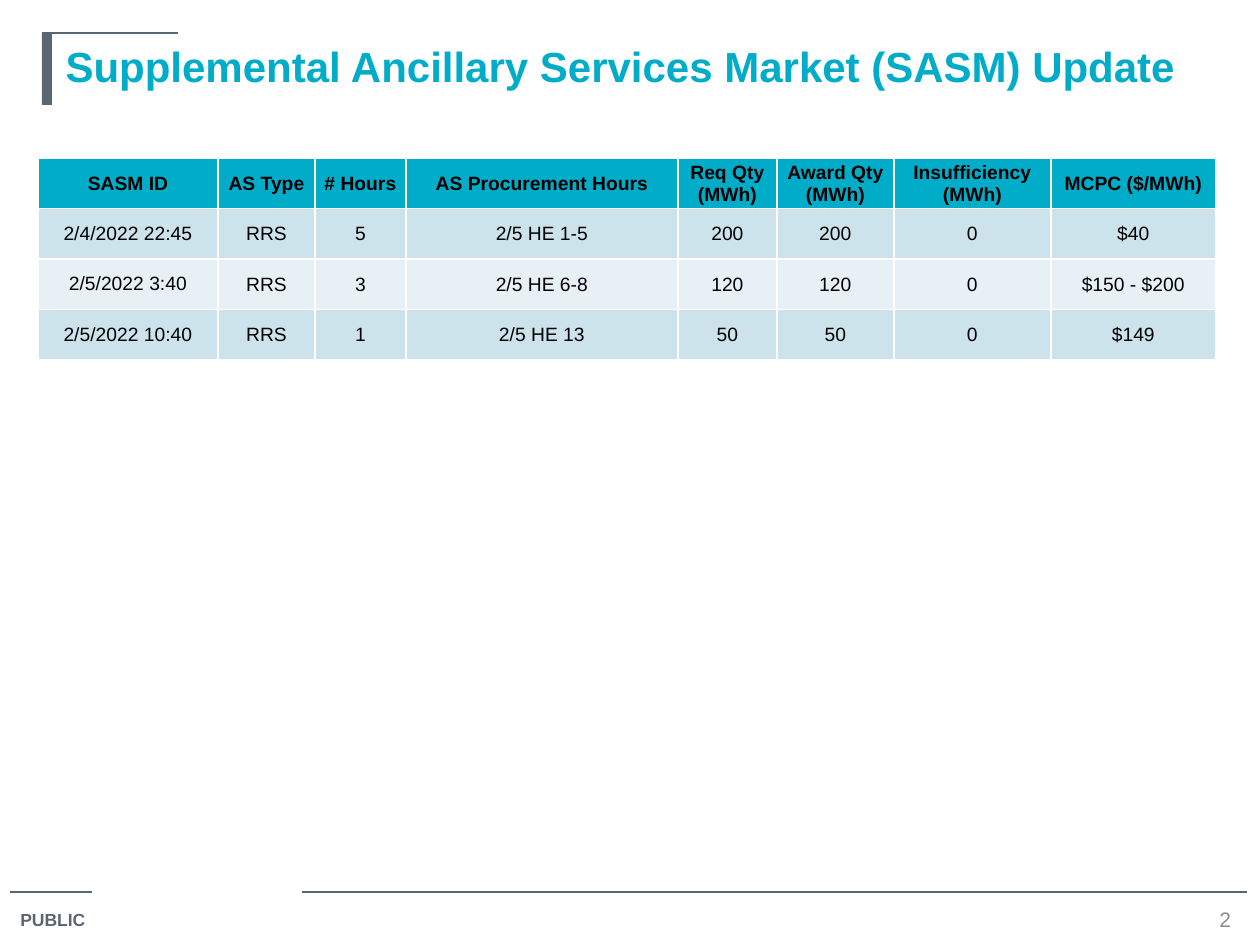
from lxml import etree
from pptx import Presentation
from pptx.dml.color import RGBColor
from pptx.enum.shapes import MSO_CONNECTOR, MSO_SHAPE
from pptx.enum.text import MSO_ANCHOR, MSO_AUTO_SIZE, PP_ALIGN
from pptx.oxml.ns import qn
from pptx.util import Pt

EMU_PER_PX = 914400 / 126
FONT = "Arial"
LEFT, CENTER = PP_ALIGN.LEFT, PP_ALIGN.CENTER
TOP, MIDDLE = MSO_ANCHOR.TOP, MSO_ANCHOR.MIDDLE
STRAIGHT = MSO_CONNECTOR.STRAIGHT
RECTANGLE = MSO_SHAPE.RECTANGLE

COLORS = {
    "teal": "00ACC8",
    "slate": "5B6770",
    "gray": "8C8C8C",
    "black": "000000",
    "band_dark": "CCE3EB",
    "band_light": "E7F1F5",
}

COLUMN_WIDTHS = [180, 97, 91, 272, 99, 117, 157, 165]
SASM_ROWS = [
    ["SASM ID", "AS Type", "# Hours", "AS Procurement Hours", "Req Qty\v(MWh)",
     "Award Qty\v(MWh)", "Insufficiency\v(MWh)", "MCPC ($/MWh)"],
    ["2/4/2022 22:45", "RRS", "5", "2/5 HE 1-5", "200", "200", "0", "$40"],
    ["2/5/2022 3:40", "RRS", "3", "2/5 HE 6-8", "120", "120", "0", "$150 - $200"],
    ["2/5/2022 10:40", "RRS", "1", "2/5 HE 13", "50", "50", "0", "$149"],
]


def px(value):
    return round(value * EMU_PER_PX)


def box(*lengths):
    return [px(length) for length in lengths]


def color(name):
    return RGBColor.from_string(COLORS[name])


def write(frame, text, size, color_name, bold=False, align=LEFT):
    frame.text = text
    paragraph = frame.paragraphs[0]
    paragraph.alignment = align
    font = paragraph.font
    font.name, font.size, font.bold = FONT, Pt(size), bold
    font.color.rgb = color(color_name)


def add_rule(slide, x1, x2, y):
    rule = slide.shapes.add_connector(STRAIGHT, *box(x1, y, x2, y))
    rule.line.color.rgb = color("slate")
    rule.line.width = Pt(0.75)
    etree.SubElement(rule._element.spPr, qn("a:effectLst"))


def add_accent_bar(slide, *place):
    bar = slide.shapes.add_shape(RECTANGLE, *box(*place))
    bar.shadow.inherit = False
    bar.fill.solid()
    bar.fill.fore_color.rgb = color("slate")
    bar.line.fill.background()


def add_label(slide, place, text, anchor=TOP, **style):
    frame = slide.shapes.add_textbox(*box(*place)).text_frame
    frame.word_wrap = True
    frame.vertical_anchor = anchor
    write(frame, text, **style)


def set_title(slide, place, text):
    title = slide.shapes.title
    title.left, title.top, title.width, title.height = box(*place)
    frame = title.text_frame
    frame.word_wrap = True
    frame.auto_size = MSO_AUTO_SIZE.NONE
    frame.vertical_anchor = TOP
    write(frame, text, 24, "teal", bold=True)


def add_sasm_table(slide, left, top, height):
    place = box(left, top, sum(COLUMN_WIDTHS), height)
    table = slide.shapes.add_table(len(SASM_ROWS), len(COLUMN_WIDTHS), *place).table
    for column, width in zip(table.columns, COLUMN_WIDTHS):
        column.width = px(width)
    for r, row in enumerate(SASM_ROWS):
        is_header = r == 0
        band = "teal" if is_header else "band_dark" if r % 2 else "band_light"
        for c, text in enumerate(row):
            cell = table.cell(r, c)
            cell.fill.solid()
            cell.fill.fore_color.rgb = color(band)
            cell.vertical_anchor = MIDDLE
            # The date cells keep the default margins
            if is_header or c > 0:
                cell.margin_left = cell.margin_right = cell.margin_top = px(1)
                cell.margin_bottom = 0
            write(cell.text_frame, text, 11, "black", is_header, CENTER)


def main():
    deck = Presentation()
    deck.slide_width, deck.slide_height = box(1260, 945)
    slide = deck.slides.add_slide(deck.slide_layouts[5])

    # Footer
    add_rule(slide, 10, 92, 892)
    add_rule(slide, 302, 1247, 892)
    add_label(slide, (8, 903, 97, 35), "PUBLIC", size=10, color_name="slate", bold=True)
    add_label(slide, (1207, 905, 32, 29), "2", MIDDLE,
              size=12, color_name="gray", align=CENTER)

    # Heading
    add_accent_bar(slide, 42, 33, 10, 72)
    add_rule(slide, 42, 178, 33)
    set_title(slide, (53, 34, 1166, 158),
              "Supplemental Ancillary Services Market (SASM) Update")

    # Market results
    add_sasm_table(slide, 38, 158, 202)

    deck.save("out.pptx")


if __name__ == "__main__":
    main()
